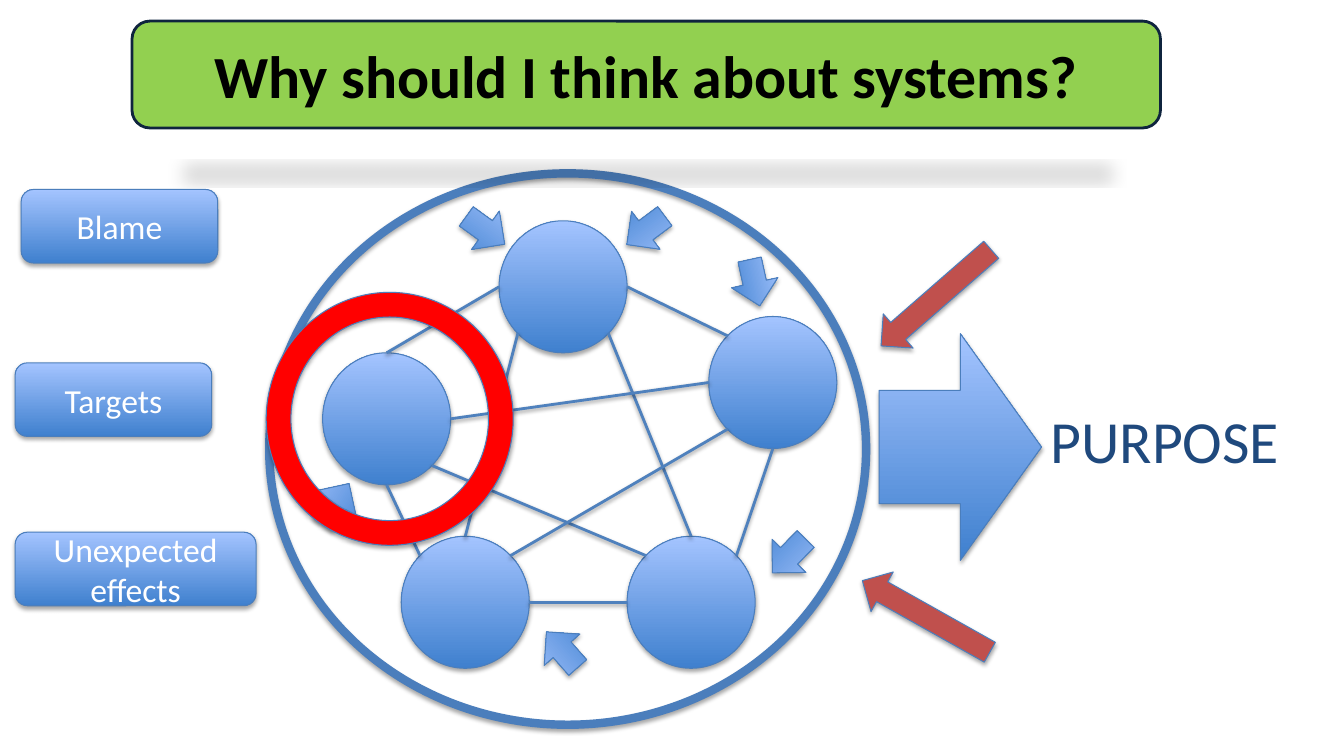
import math
import pptx
import pptx.util
import pptx.oxml
import pptx.oxml.ns
import pptx.dml.color
import pptx.enum.shapes
import pptx.enum.text

deck = pptx.Presentation()
deck.slide_width = pptx.util.Inches(13.33)
deck.slide_height = pptx.util.Inches(7.5)
slide = deck.slides.add_slide(deck.slide_layouts[6])

# Grid: one cell is a tenth of an inch
CELL = pptx.util.Inches(0.1)
KIND = pptx.enum.shapes.MSO_SHAPE
ALIGN = pptx.enum.text.PP_ALIGN
HUES = {"low": "3F80CE", "high": "A4C4FF", "edge": "4B7EBC", "link": "4F81BD",
        "red": "FF0000", "brick": "C0504D", "green": "92D050", "navy": "0F243E",
        "ink": "1F497D", "white": "FFFFFF", "black": "000000"}
HUE = {name: pptx.dml.color.RGBColor.from_string(code) for name, code in HUES.items()}


def shade(item, dark=35, blur=3.1, drop=1.8, scale=""):
    """Give a shape or line a soft shadow that falls straight down."""
    item._element.spPr.append(pptx.oxml.parse_xml(
        f'<a:effectLst {pptx.oxml.ns.nsdecls("a")}>'
        f'<a:outerShdw blurRad="{pptx.util.Pt(blur)}" dist="{pptx.util.Pt(drop)}" '
        f'dir="5400000" {scale} rotWithShape="0"><a:srgbClr val="{HUES["black"]}">'
        f'<a:alpha val="{dark * 1000}"/></a:srgbClr></a:outerShdw></a:effectLst>'))


def put(kind, box, text="", fill="blend", edge="edge", width=0.75, turn=0,
        size=24, hue="white", bold=False, align=ALIGN.CENTER):
    """Add a shape, or a plain text box when kind is None."""
    place = [round(n * CELL) for n in box]
    if kind is None:
        item = slide.shapes.add_textbox(*place)
    else:
        item = slide.shapes.add_shape(kind, *place)
        item.rotation = turn
        item.line.color.rgb = HUE[edge]
        item.line.width = pptx.util.Pt(width)
        if fill is None:
            item.fill.background()
        elif fill == "blend":
            item.fill.gradient()
            item.fill.gradient_angle = 90
            for stop, name in zip(item.fill.gradient_stops, ("low", "high")):
                stop.color.rgb = HUE[name]
        else:
            item.fill.solid()
            item.fill.fore_color.rgb = HUE[fill]
    if text:
        frame = item.text_frame
        frame.word_wrap = True
        para = frame.paragraphs[0]
        para.alignment = align
        run = para.add_run()
        run.text = text
        run.font.name = "Calibri"
        run.font.size = pptx.util.Pt(size)
        run.font.bold = bold
        run.font.color.rgb = HUE[hue]
    return item


# Parts of the system
WIDE, TALL = 12.7, 13.1
nodes = {"left": (32, 35), "top": (49.5, 21.9), "base": (39.8, 53.2),
         "foot": (62.2, 53.2), "right": (70.3, 31.4)}
for x, y in nodes.values():
    shade(put(KIND.OVAL, (x, y, WIDE, TALL)))

# Links between parts: node and angle on its rim, clockwise from the right
links = [("top", 0, "right", 225), ("right", 90, "foot", 315),
         ("foot", 180, "base", 0), ("left", 270, "top", 180),
         ("base", 225, "left", 90), ("base", 270, "top", 135),
         ("top", 45, "foot", 270), ("foot", 225, "left", 45),
         ("left", 0, "right", 180), ("base", 315, "right", 135)]
for first, start, last, end in links:
    ends = []
    for name, angle in ((first, start), (last, end)):
        x, y = nodes[name]
        turn = math.radians(angle)
        ends += [round((x + WIDE / 2 * (1 + math.cos(turn))) * CELL),
                 round((y + TALL / 2 * (1 + math.sin(turn))) * CELL)]
    link = slide.shapes.add_connector(pptx.enum.shapes.MSO_CONNECTOR.STRAIGHT, *ends)
    link.line.color.rgb = HUE["link"]
    link.line.width = pptx.util.Pt(2)
    shade(link, dark=38, drop=1.6)

# System border and its purpose
shade(put(KIND.OVAL, (26.7, 17.2, 59.2, 54.7), fill=None, width=6))
shade(put(KIND.RIGHT_ARROW, (87.2, 33.1, 16.1, 22.5)))
put(None, (103.2, 39.6, 30.2, 8.2), "PURPOSE", size=42.7, hue="ink", align=ALIGN.LEFT)

# Small arrows inside the border
for x, y, turn in [(45.8, 20.5, 35.9), (75.9, 52.8, 134.4), (31, 47.6, 302.7),
                   (53.4, 62.1, 228.7), (72.5, 25.7, 77.6), (61.7, 20.5, 143.2)]:
    shade(put(KIND.RIGHT_ARROW, (x, y, 4.7, 4.7), turn=turn))

# Outside forces
for x, y, turn in [(84.6, 58.9, 209.3), (85.6, 27.3, 138.9)]:
    shade(put(KIND.RIGHT_ARROW, (x, y, 14.5, 4.5), fill="brick", turn=turn))

# Ring round the singled-out part
ring = put(KIND.DONUT, (26.4, 29, 24.5, 25.1), fill="red")
ring.adjustments[0] = 0.1
shade(ring)

# Labels at the left
for x, y, wide, text in [(2.1, 18.8, 19.5, "Blame"), (1.5, 36, 19.5, "Targets"),
                         (1.5, 52.8, 23.9, "Unexpected effects")]:
    shade(put(KIND.ROUNDED_RECTANGLE, (x, y, wide, 7.3), text))

# Title with a flat shadow cast below it
title = put(KIND.ROUNDED_RECTANGLE, (13.1, 2.1, 102, 10.6),
            "Why should I think about systems?", fill="green", edge="navy",
            width=2, size=42.7, hue="black", bold=True)
shade(title, dark=15, blur=12, drop=25, scale='sx="90000" sy="-19000"')

deck.save("out.pptx")
